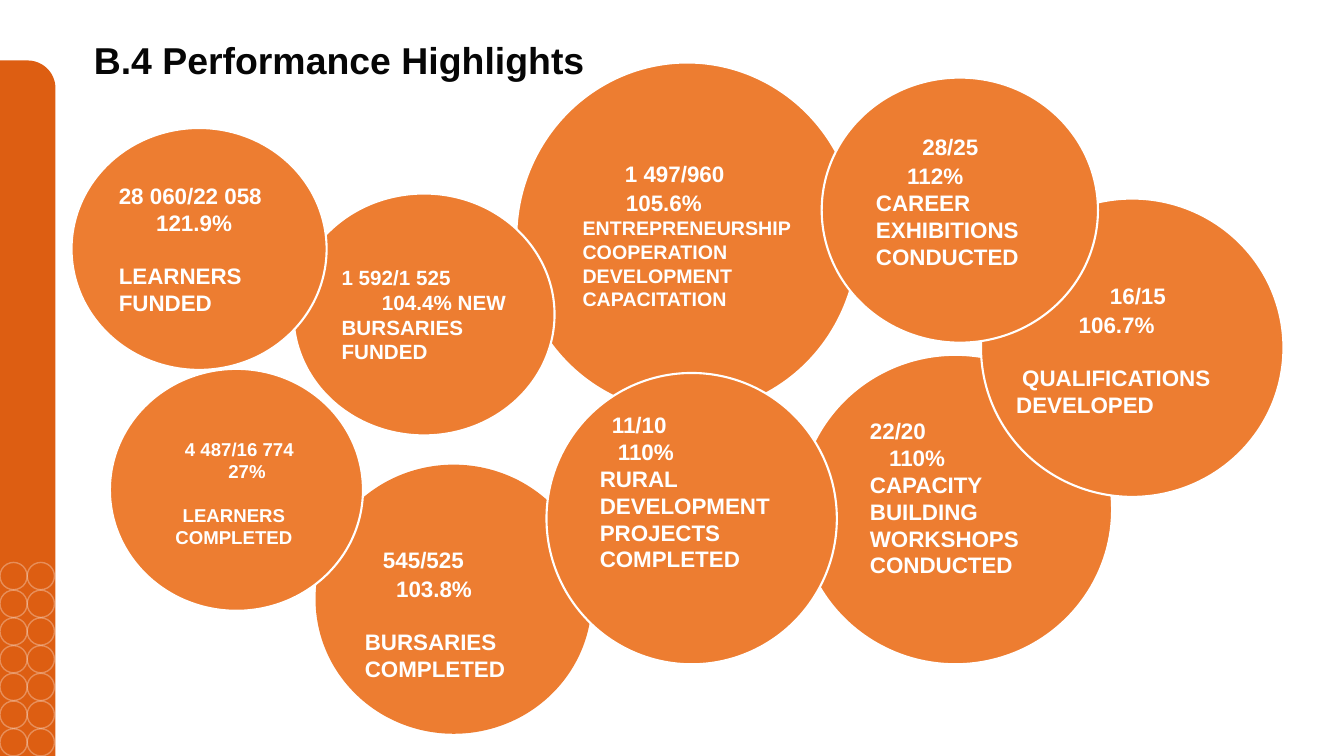
from lxml import etree
from pptx import Presentation
from pptx import util as u
from pptx.dml.color import RGBColor
from pptx.enum import shapes, text
from pptx.oxml.ns import qn

COLOURS = {"bar": "DD5E12", "bubble": "ED7D31", "white": "FFFFFF", "title": "060606"}
FONT = "Arial"
KINDS = shapes.MSO_SHAPE
LEFT, CENTRE = text.PP_ALIGN.LEFT, text.PP_ALIGN.CENTER
BLANK = 18.4  # points of space, one 16 pt line
STEP = 1.7    # points of extra space below a lowered first line


class HighlightsSlide:
    def __init__(self, deck):
        self.page = deck.slides.add_slide(deck.slide_layouts[5])

    def colour(self, name):
        return RGBColor.from_string(COLOURS[name])

    def shape(self, kind, place, fill=None, line=None, width=1.5):
        shape = self.page.shapes.add_shape(kind, *map(u.Inches, place))
        shape.shadow.inherit = False
        if fill:
            shape.fill.solid()
            shape.fill.fore_color.rgb = self.colour(fill)
        else:
            shape.fill.background()
        if line:
            shape.line.color.rgb = self.colour(line)
            shape.line.width = u.Pt(width)
        else:
            shape.line.fill.background()
        return shape

    def ring(self, place):
        """Thin white circle at 30 % opacity."""
        ring = self.shape(KINDS.OVAL, place, line="white", width=1)
        tint = ring.line.fill._xPr.find(".//" + qn("a:srgbClr"))
        etree.SubElement(tint, qn("a:alpha"), val="30000")

    def span(self, para, words, size, colour):
        span = para.add_run()
        span.text = words
        span.font.name = FONT
        span.font.size = u.Pt(size)
        span.font.bold = True
        span.font.color.rgb = self.colour(colour)

    def title(self, words, place):
        box = self.page.shapes.title
        box.left, box.top, box.width, box.height = map(u.Inches, place)
        frame = box.text_frame
        frame.auto_size = text.MSO_AUTO_SIZE.NONE
        frame.vertical_anchor = text.MSO_ANCHOR.TOP
        para = frame.paragraphs[0]
        para.alignment = LEFT
        para.line_spacing = 0.9
        self.span(para, words, 26.7, "title")

    def label(self, box, lines, size, align=LEFT, drop=0, anchor=text.MSO_ANCHOR.TOP):
        """Fill a box; a line is (indent, space before, words, optional 14 pt words)."""
        frame = box.text_frame
        frame.word_wrap = True
        frame.vertical_anchor = anchor
        frame.margin_top = u.Inches(0.05 + drop)
        for number, (indent, gap, words, *small) in enumerate(lines):
            para = frame.add_paragraph() if number else frame.paragraphs[0]
            props = para._p.get_or_add_pPr()
            props.set("marL", "0")
            props.set("indent", str(u.Inches(indent)))
            para.alignment = align
            if gap:
                para.space_before = u.Pt(gap)
            self.span(para, words, size, "white")
            for extra in small:
                self.span(para, extra, 14, "white")

    def bubble(self, circle, lines, place=None, size=16, outline="white",
               filled=True, **style):
        """Circle with its text inside, or in a label box laid over it."""
        oval = self.shape(KINDS.OVAL, circle, "bubble", outline)
        if place is None:
            self.label(oval, lines, size, anchor=text.MSO_ANCHOR.MIDDLE)
            return
        if filled:
            box = self.shape(KINDS.RECTANGLE, place, "bubble")
        else:
            box = self.page.shapes.add_textbox(*map(u.Inches, place))
        self.label(box, lines, size, **style)


def main():
    deck = Presentation()
    deck.slide_width, deck.slide_height = u.Inches(13.33), u.Inches(7.5)
    slide = HighlightsSlide(deck)

    bar = slide.shape(KINDS.ROUND_1_RECTANGLE, (0, 0.6, 0.55, 6.9), "bar")
    bar.adjustments[0] = 0.5
    for row in range(7):
        for column in range(2):
            slide.ring((column * 0.27, 5.58 + row * 0.275, 0.27, 0.27))
    slide.title("B.4 Performance Highlights", (0.83, 0.37, 10.2, 0.63))

    slide.bubble((3.13, 4.61, 2.74, 2.67), [
        (0.18, 0, "545/525"), (0.31, STEP, "103.8%"),
        (0, BLANK, "BURSARIES COMPLETED"),
    ], (3.52, 5.27, 1.95, 1.58), outline=None, drop=0.1)
    slide.bubble((7.92, 3.52, 3.11, 3.07), [
        (0, 0, "22/20"), (0.19, 0, "110%"),
        (0, 0, "CAPACITY BUILDING WORKSHOPS CONDUCTED"),
    ], (8.53, 4.09, 2.07, 1.72))
    slide.bubble((5.12, 0.62, 3.39, 3.48), [
        (0.42, 0, "1 497/960"),
        (0.43, STEP, "105.6% ", "ENTREPRENEURSHIP COOPERATION DEVELOPMENT CAPACITATION"),
    ], (5.68, 1.47, 2.34, 1.67), drop=0.07)
    slide.bubble((2.91, 1.92, 2.59, 2.4), [
        (0, 0, "1 592/1 525"), (0.4, 0, "104.4% NEW BURSARIES FUNDED"),
    ], size=14.7)
    slide.bubble((9.73, 1.97, 3, 2.96), [
        (0.93, 0, "16/15"), (0.62, STEP, "106.7%"),
        (0.06, BLANK, "QUALIFICATIONS DEVELOPED"),
    ], (9.98, 2.65, 2.35, 1.58), drop=0.1)
    slide.bubble((1.09, 3.66, 2.51, 2.4), [
        (0.11, 0, "4 487/16 774"), (0.26, 0, "27%"),
        (0, 15.3, "LEARNERS COMPLETED"),
    ], (1.31, 4.29, 2.02, 1.22), size=13.3, align=CENTRE)
    slide.bubble((5.42, 3.7, 2.88, 2.89), [
        (0.12, 0, "11/10"), (0.18, 0, "110%"),
        (0, 0, "RURAL DEVELOPMENT PROJECTS COMPLETED"),
    ], (5.85, 4.03, 2.41, 1.72), filled=False)
    slide.bubble((0.71, 1.27, 2.53, 2.4), [
        (0, 0, "28 060/22 058"), (0.37, 0, "121.9%"),
        (0, BLANK, "LEARNERS FUNDED"),
    ])
    slide.bubble((8.15, 0.77, 2.74, 2.63), [
        (0.46, 0, "28/25"), (0.31, STEP, "112%"),
        (0, 0, "CAREER EXHIBITIONS CONDUCTED"),
    ], (8.59, 1.17, 2.4, 1.58), filled=False, drop=0.1)

    deck.save("out.pptx")


if __name__ == "__main__":
    main()
